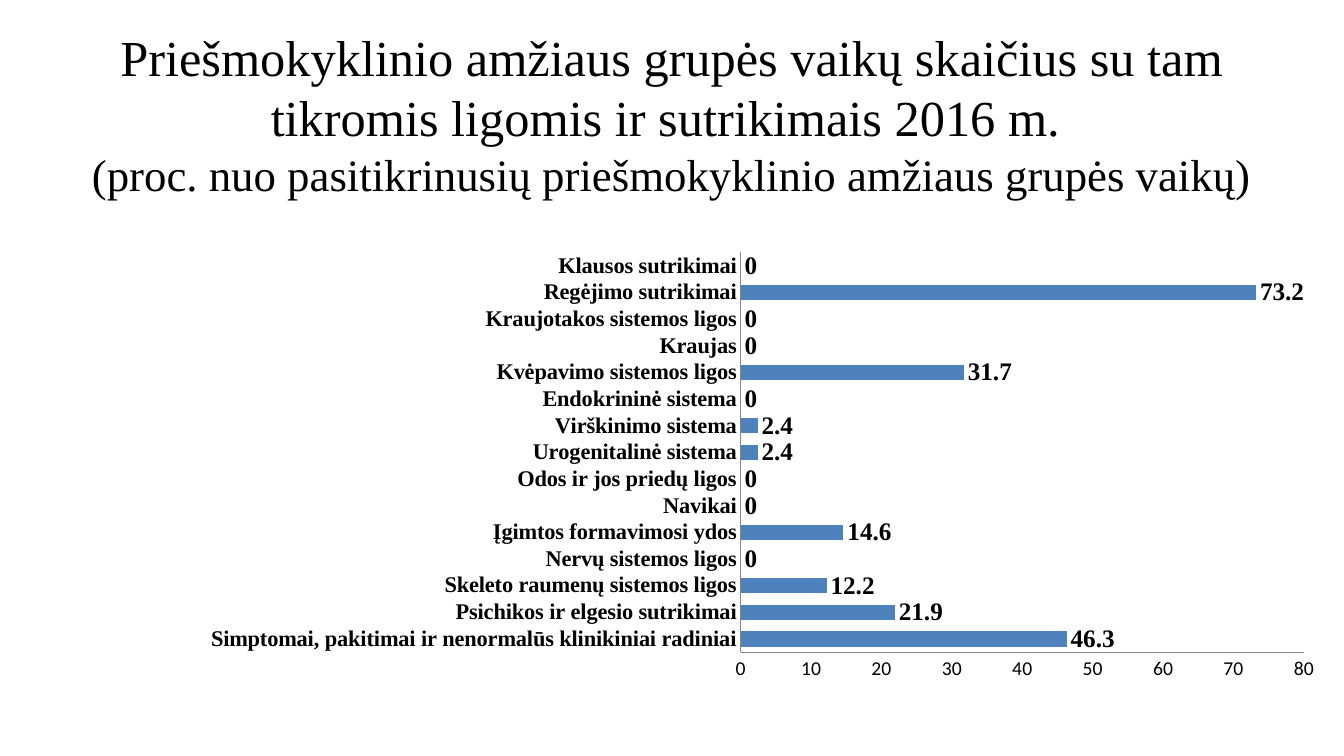
"""Build the slide on illnesses among pre-school children in 2016."""
from lxml import etree
from pptx import Presentation
from pptx.chart.data import CategoryChartData
from pptx.dml.color import RGBColor
from pptx.enum.chart import XL_CHART_TYPE, XL_LABEL_POSITION, XL_TICK_MARK
from pptx.enum.text import MSO_ANCHOR, PP_ALIGN
from pptx.oxml.ns import qn
from pptx.util import Inches, Pt

BAR = XL_CHART_TYPE.BAR_CLUSTERED
OUTSIDE = XL_LABEL_POSITION.OUTSIDE_END
NO_TICK = XL_TICK_MARK.NONE
MIDDLE, CENTER = MSO_ANCHOR.MIDDLE, PP_ALIGN.CENTER

TITLE = "Priešmokyklinio amžiaus grupės vaikų skaičius su tam tikromis ligomis ir sutrikimais 2016 m. "
SUBTITLE = "(proc. nuo pasitikrinusių priešmokyklinio amžiaus grupės vaikų)"
SERIES_NAME = "Series 1"
ILLNESSES = [
    ("Simptomai, pakitimai ir nenormalūs klinikiniai radiniai", 46.3),
    ("Psichikos ir elgesio sutrikimai", 21.9),
    ("Skeleto raumenų sistemos ligos", 12.2),
    ("Nervų sistemos ligos", 0),
    ("Įgimtos formavimosi ydos", 14.6),
    ("Navikai", 0),
    ("Odos ir jos priedų ligos", 0),
    ("Urogenitalinė sistema", 2.4),
    ("Virškinimo sistema", 2.4),
    ("Endokrininė sistema", 0),
    ("Kvėpavimo sistemos ligos", 31.7),
    ("Kraujas", 0),
    ("Kraujotakos sistemos ligos", 0),
    ("Regėjimo sutrikimai", 73.2),
    ("Klausos sutrikimai", 0),
]

THEME = {
    "serif": "Times New Roman", "sans": "Calibri",
    "text": RGBColor(0x00, 0x00, 0x00),
    "bar": RGBColor(0x4F, 0x81, 0xBD),
    "axis": RGBColor(0x86, 0x86, 0x86),
    "title": 36, "subtitle": 32, "value": 18, "category": 16, "scale": 14,
}
SLIDE_SIZE = (13.33, 7.5)
TITLE_AREA = (0.05, 0.04, 0.9, 0.22)
CHART_AREA = (0, 0.313, 0.986, 0.673)
PLOT_SHARES = {"x": 0.559, "y": 0.031, "w": 0.425, "h": 0.786}


def place(shares):
    """Turn shares of the slide into lengths."""
    return [Inches(share * SLIDE_SIZE[i % 2]) for i, share in enumerate(shares)]


def style(font, face, size, bold=False):
    """Apply face, size and weight from the theme."""
    font.name, font.size, font.bold = THEME[face], Pt(THEME[size]), bold
    font.color.rgb = THEME["text"]


def add_title(page):
    """Add the two-size heading."""
    frame = page.shapes.add_textbox(*place(TITLE_AREA)).text_frame
    frame.word_wrap = True
    frame.vertical_anchor = MIDDLE
    para = frame.paragraphs[0]
    para.text = f"{TITLE}\v{SUBTITLE}"
    para.alignment = CENTER
    for span, size in zip(para.runs, ("title", "subtitle")):
        style(span.font, "serif", size)


def fix_plot(chart):
    """Pin the inner plot area to its shares of the chart."""
    plot_area = chart.plots[0]._element.getparent()
    for old in plot_area.findall(qn("c:layout")):
        plot_area.remove(old)
    layout = etree.Element(qn("c:layout"))
    manual = etree.SubElement(layout, qn("c:manualLayout"))
    settings = {"layoutTarget": "inner", "xMode": "edge", "yMode": "edge", **PLOT_SHARES}
    for tag, value in settings.items():
        etree.SubElement(manual, qn(f"c:{tag}")).set("val", str(value))
    plot_area.insert(0, layout)


def add_illness_chart(page):
    """Add the bar chart of illness shares."""
    names, values = zip(*ILLNESSES)
    data = CategoryChartData()
    data.categories = names
    data.add_series(SERIES_NAME, values)
    chart = page.shapes.add_chart(BAR, *place(CHART_AREA), data).chart
    chart.has_legend = chart.has_title = False
    style(chart.font, "sans", "scale")
    fix_plot(chart)

    plot = chart.plots[0]
    plot.gap_width = 75
    plot.vary_by_categories = False
    fill = plot.series[0].format.fill
    fill.solid()
    fill.fore_color.rgb = THEME["bar"]
    plot.has_data_labels = True
    labels = plot.data_labels
    labels.show_value = True
    labels.position = OUTSIDE
    style(labels.font, "serif", "value", True)

    scale = chart.value_axis
    scale.minimum_scale, scale.maximum_scale, scale.major_unit = 0, 80, 10
    for axis in (chart.category_axis, scale):
        axis.has_major_gridlines = False
        axis.major_tick_mark = axis.minor_tick_mark = NO_TICK
        axis.format.line.color.rgb = THEME["axis"]
        axis.format.line.width = Pt(0.75)
    style(chart.category_axis.tick_labels.font, "serif", "category", True)
    style(scale.tick_labels.font, "sans", "scale")


def main():
    """Create and save the deck."""
    deck = Presentation()
    deck.slide_width, deck.slide_height = map(Inches, SLIDE_SIZE)
    page = deck.slides.add_slide(deck.slide_layouts[6])
    add_title(page)
    add_illness_chart(page)
    deck.save("out.pptx")


if __name__ == "__main__":
    main()
